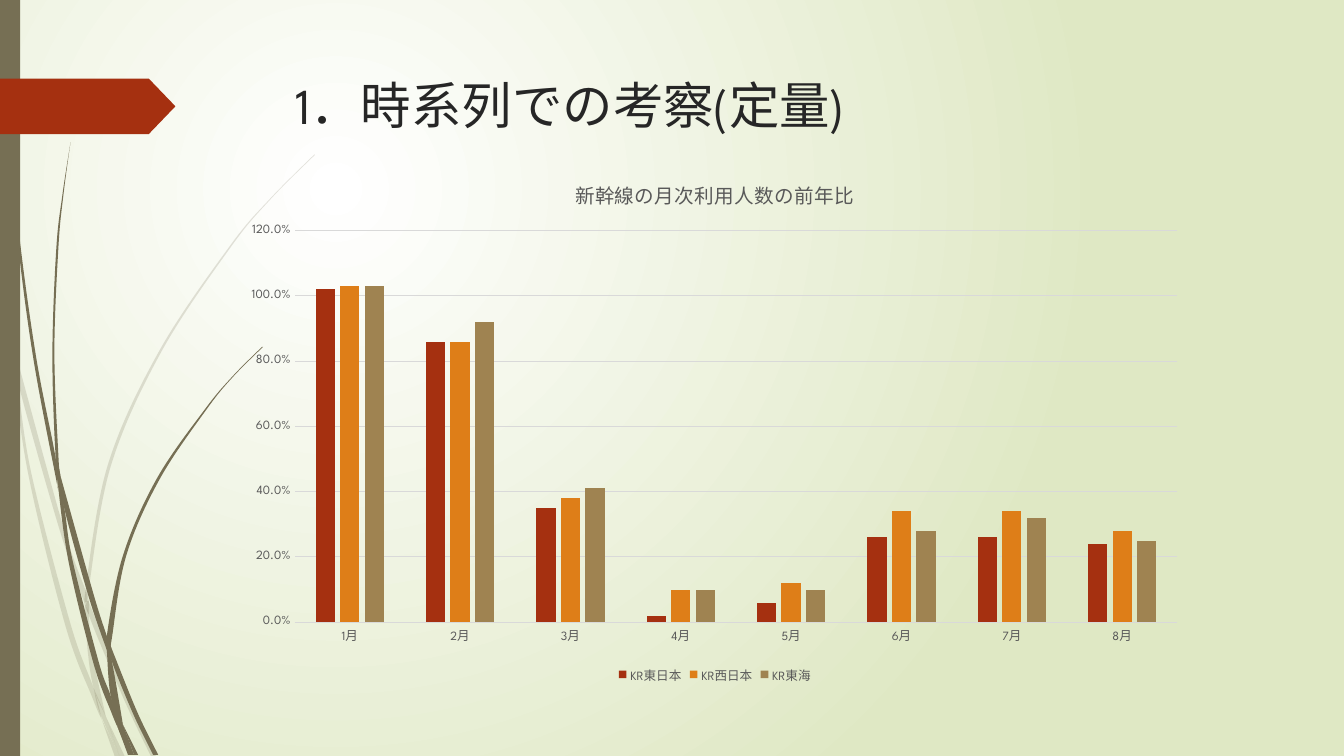
from lxml import etree
from pptx import Presentation
from pptx.chart.data import CategoryChartData
from pptx.dml.color import RGBColor
from pptx.enum.chart import XL_CHART_TYPE, XL_LEGEND_POSITION, XL_TICK_MARK
from pptx.enum.shapes import MSO_SHAPE
from pptx.enum.text import MSO_ANCHOR
from pptx.oxml import parse_xml
from pptx.oxml.ns import nsdecls, qn
from pptx.util import Inches, Pt

COLUMNS = XL_CHART_TYPE.COLUMN_CLUSTERED
BOTTOM = XL_LEGEND_POSITION.BOTTOM
NO_TICK = XL_TICK_MARK.NONE
RECT, PENTAGON = MSO_SHAPE.RECTANGLE, MSO_SHAPE.PENTAGON
TOP = MSO_ANCHOR.TOP

W, H = 13.33, 7.5
FONT = "League Spartan"
COLORS = {"white": "FFFFFF", "lime": "DFE8C4", "olive": "766F54", "rust": "A53010",
          "orange": "DE7E18", "tan": "9F8351", "title": "262626", "label": "595959",
          "grid": "D9D9D9"}

TITLE = "1．時系列での考察(定量)"
CHART_TITLE = "新幹線の月次利用人数の前年比"
MONTHS = [f"{n}月" for n in range(1, 9)]
SERIES = [
    ("KR東日本", "rust", [1.02, 0.86, 0.35, 0.02, 0.06, 0.26, 0.26, 0.24]),
    ("KR西日本", "orange", [1.03, 0.86, 0.38, 0.1, 0.12, 0.34, 0.34, 0.28]),
    ("KR東海", "tan", [1.03, 0.92, 0.41, 0.1, 0.1, 0.28, 0.32, 0.25]),
]
PLOT = {"x": 0.064, "y": 0.137, "w": 0.916, "h": 0.74}

PALE_BLADES = [
    ([(0, 2.99), (0.1, 3.44), (0.11, 3.5)], [(0, 2.82), (0.09, 3.22), (0.11, 3.5)]),
    ([(0.14, 3.45), (0.17, 3.76), (0.58, 5.22), (0.84, 5.99)],
     [(0.14, 3.45), (0.62, 5.2), (0.85, 5.86)]),
    ([(0.88, 5.96), (0.88, 6.1), (1.23, 6.94), (1.5, 7.51)],
     [(0.88, 5.96), (0.92, 6.07), (1.27, 6.92), (1.55, 7.51)]),
    ([(1.05, 7.11), (1.19, 7.51)], [(1.05, 7.11), (1.24, 7.51)]),
    ([(0.11, 3.5), (0.28, 4.7), (0.65, 6.21), (0.92, 6.93), (1.01, 7.14)],
     [(0.11, 3.5), (0.17, 3.76), (0.31, 4.69), (0.7, 6.19), (0.93, 6.83), (1.01, 7.14)]),
    ([(0.84, 5.99), (0.87, 6.46), (0.93, 6.83), (1.05, 7.11)],
     [(0.84, 5.99), (0.88, 6.1), (0.91, 6.46), (1.05, 7.11)]),
    ([(3.12, 1.53), (2.68, 1.97), (2.28, 2.44), (1.58, 3.48), (1.07, 4.61), (0.85, 5.84), (0.88, 5.96)],
     [(3.12, 1.54), (2.68, 1.98), (2.29, 2.45), (1.6, 3.49), (1.1, 4.62), (0.88, 5.84), (0.88, 5.96)]),
    ([(1.01, 7.14), (1.14, 7.51)], [(1.01, 7.14), (1.19, 7.51)]),
    ([(0.85, 5.86), (0.84, 5.99), (0.88, 6.1)], [(0.85, 5.86), (0.88, 5.96), (0.88, 6.1)]),
    ([(0.93, 6.83), (0.99, 7.07), (1.19, 7.51)], [(0.93, 6.83), (1.05, 7.11), (1.19, 7.51)]),
]
DARK_BLADES = [
    ([(0.03, 0), (0.07, 1.1), (0.17, 2.33), (0.33, 3.55), (0.56, 4.77), (0.57, 4.81)],
     [(0.04, 0), (0.08, 1.09), (0.19, 2.32), (0.36, 3.55), (0.55, 4.53), (0.57, 4.81)]),
    ([(0.6, 4.72), (0.64, 5.05), (0.88, 5.92), (1.06, 6.45)],
     [(0.6, 4.72), (0.93, 5.9), (1.06, 6.31)]),
    ([(1.1, 6.41), (1.11, 6.56), (1.32, 7.08), (1.52, 7.49)],
     [(1.1, 6.41), (1.13, 6.49), (1.36, 7.06), (1.57, 7.49)]),
    ([(0.57, 4.77), (0.68, 5.57), (0.93, 6.59), (1.11, 7.08), (1.17, 7.22)],
     [(0.57, 4.77), (0.64, 5.05), (0.72, 5.56), (0.98, 6.57), (1.1, 6.91), (1.17, 7.22)]),
    ([(0.7, 1.41), (0.62, 1.93), (0.56, 2.45), (0.52, 3.49), (0.55, 4.49), (0.6, 4.72)],
     [(0.7, 1.41), (0.63, 1.93), (0.58, 2.45), (0.54, 3.49), (0.58, 4.53), (0.6, 4.72)]),
    ([(1.22, 7.19), (1.33, 7.49)], [(1.22, 7.19), (1.37, 7.49)]),
    ([(0.55, 4.49), (0.57, 4.77), (0.64, 5.05)], [(0.55, 4.49), (0.6, 4.72), (0.64, 5.05)]),
    ([(2.6, 3.44), (2.31, 3.73), (2.04, 4.05), (1.56, 4.74), (1.22, 5.51), (1.06, 6.31), (1.1, 6.41)],
     [(2.61, 3.44), (2.31, 3.74), (2.05, 4.06), (1.58, 4.76), (1.25, 5.52), (1.11, 6.33), (1.1, 6.41)]),
    ([(1.17, 7.22), (1.27, 7.49)], [(1.17, 7.22), (1.31, 7.49)]),
    ([(1.06, 6.45), (1.1, 6.91), (1.22, 7.19)], [(1.06, 6.45), (1.11, 6.56), (1.22, 7.19)]),
    ([(1.06, 6.31), (1.06, 6.45), (1.11, 6.56)], [(1.06, 6.31), (1.1, 6.41), (1.11, 6.56)]),
    ([(1.1, 6.91), (1.17, 7.22), (1.3, 7.49)], [(1.1, 6.91), (1.22, 7.19), (1.33, 7.49)]),
]


def rgb(name):
    return RGBColor.from_string(COLORS[name])


def set_font(font, size, color):
    font.name, font.size, font.bold = FONT, Pt(size), False
    font.color.rgb = rgb(color)


def add_text(tf, text, size=12, color="label"):
    r = tf.paragraphs[0].add_run()
    r.text = text
    set_font(r.font, size, color)


def paint(sp, color, alpha=None):
    sp.shadow.inherit = False
    sp.fill.solid()
    sp.fill.fore_color.rgb = rgb(color)
    sp.line.fill.background()
    if alpha:
        clr = sp.fill._xPr.find(".//" + qn("a:srgbClr"))
        etree.SubElement(clr, qn("a:alpha")).set("val", str(alpha * 1000))


def bezier(points):
    ends = [points[0]] + points + [points[-1]]
    curve = [points[0]]
    for a, b, c, d in zip(ends, ends[1:], ends[2:], ends[3:]):
        curve.append(tuple(q + (s - p) / 6 for p, q, s in zip(a, b, c)))
        curve.append(tuple(s - (u - q) / 6 for q, s, u in zip(b, c, d)))
        curve.append(c)
    return curve


def add_blade(slide, left, right, alpha=None):
    outline = bezier(left) + [left[-1], right[-1]] + bezier(right[::-1])
    outline = [(x * 1000, y * 1000) for x, y in outline]
    fb = slide.shapes.build_freeform(*outline[0], scale=Inches(1) / 1000)
    fb.add_line_segments(outline[1:], close=True)
    sp = fb.convert_to_shape()
    lines = list(sp._element.iter(qn("a:lnTo")))
    for i in range(0, len(lines) // 3 * 3, 3):
        curve = etree.Element(qn("a:cubicBezTo"))
        lines[i].addprevious(curve)
        for line in lines[i:i + 3]:
            curve.append(line[0])
            line.getparent().remove(line)
    paint(sp, "olive", alpha)


def add_background(slide):
    fill = slide.background.fill
    fill.gradient()
    for stop, color in zip(fill.gradient_stops, ("white", "lime")):
        stop.color.rgb = rgb(color)
    grad = slide.element.find(".//" + qn("a:gradFill"))
    grad.replace(grad.find(qn("a:lin")), parse_xml(
        f'<a:path {nsdecls("a")} path="circle">'
        '<a:fillToRect l="50000" t="50000" r="100000" b="100000"/></a:path>'))


def add_ratio_chart(slide):
    data = CategoryChartData(number_format="0.0%")
    data.categories = MONTHS
    for name, _, values in SERIES:
        data.add_series(name, values)
    box = [Inches(v) for v in (2.31, 1.57, 9.56, 5.25)]
    chart = slide.shapes.add_chart(COLUMNS, *box, data).chart
    set_font(chart.font, 10, "label")
    chart.has_title = chart.has_legend = True
    add_text(chart.chart_title.text_frame, CHART_TITLE, size=14)
    chart.legend.position = BOTTOM
    chart.legend.include_in_layout = False
    set_font(chart.legend.font, 9, "label")

    cat, val = chart.category_axis, chart.value_axis
    for axis in (cat, val):
        axis.major_tick_mark = axis.minor_tick_mark = NO_TICK
        set_font(axis.tick_labels.font, 9, "label")
    val.minimum_scale, val.maximum_scale, val.major_unit = 0, 1.2, 0.2
    val.tick_labels.number_format = "0.0%"
    val.tick_labels.number_format_is_linked = False
    val.format.line.fill.background()
    for line in (cat.format.line, val.major_gridlines.format.line):
        line.color.rgb = rgb("grid")
        line.width = Pt(0.75)

    plot = chart.plots[0]
    plot.gap_width, plot.overlap, plot.vary_by_categories = 219, -27, False
    for series, (_, color, _) in zip(plot.series, SERIES):
        series.format.fill.solid()
        series.format.fill.fore_color.rgb = rgb(color)

    area = chart.element.find(".//" + qn("c:plotArea"))
    for old in area.findall(qn("c:layout")):
        area.remove(old)
    sizes = "".join(f'<c:{k} val="{v}"/>' for k, v in PLOT.items())
    area.insert(0, parse_xml(
        f'<c:layout {nsdecls("c")}><c:manualLayout><c:layoutTarget val="inner"/>'
        f'<c:xMode val="edge"/><c:yMode val="edge"/>{sizes}</c:manualLayout></c:layout>'))


prs = Presentation()
prs.slide_width, prs.slide_height = Inches(W), Inches(H)
slide = prs.slides.add_slide(prs.slide_layouts[6])
add_background(slide)
for blades, alpha in ((PALE_BLADES, 20), (DARK_BLADES, None)):
    for left, right in blades:
        add_blade(slide, left, right, alpha)
paint(slide.shapes.add_shape(RECT, 0, 0, Inches(0.2), Inches(H)), "olive")
tag = slide.shapes.add_shape(PENTAGON, 0, Inches(0.78), Inches(1.74), Inches(0.55))
tag.adjustments[0] = 0.48
paint(tag, "rust")
sp = slide.shapes.add_textbox(*[Inches(v) for v in (2.83, 0.69, 9.75, 0.89)])
tf = sp.text_frame
tf.word_wrap, tf.vertical_anchor = True, TOP
add_text(tf, TITLE, size=36, color="title")
add_ratio_chart(slide)
prs.save("out.pptx")
